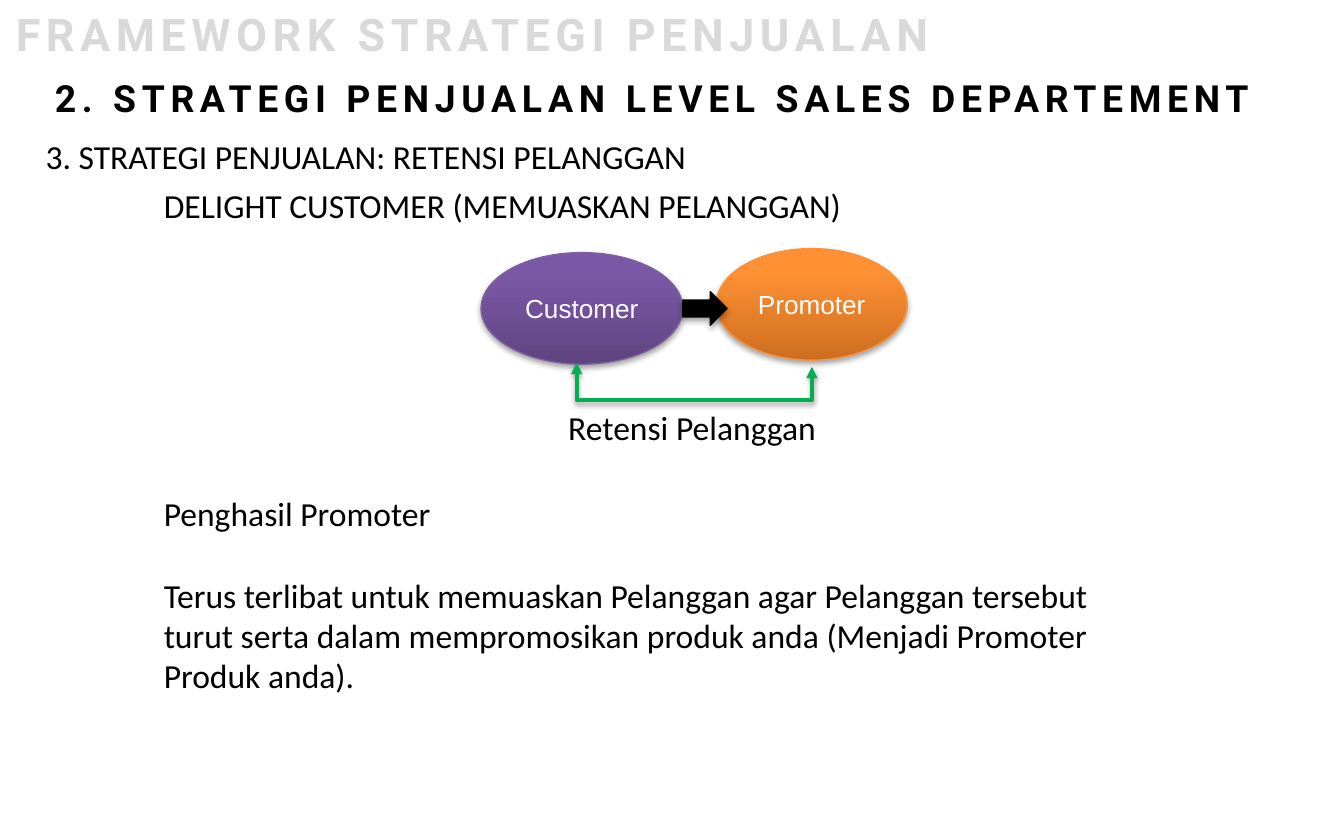
from copy import deepcopy

from lxml import etree
from pptx import Presentation
from pptx.dml.color import RGBColor
from pptx.enum import shapes, text
from pptx.oxml.ns import qn
from pptx.util import Inches, Pt

BLACK = RGBColor(0x00, 0x00, 0x00)
WHITE = RGBColor(0xFF, 0xFF, 0xFF)
GRAY = RGBColor(0xD9, 0xD9, 0xD9)
GREEN = RGBColor(0x00, 0xB0, 0x50)
PURPLE_LINE = RGBColor(0x7D, 0x60, 0xA0)
PURPLES = [RGBColor(0x5F, 0x44, 0x80), RGBColor(0x7B, 0x58, 0xA6), RGBColor(0x7C, 0x57, 0xA8)]
ORANGE_LINE = RGBColor(0xF6, 0x92, 0x40)
ORANGES = [RGBColor(0xCC, 0x6E, 0x20), RGBColor(0xFF, 0x90, 0x34), RGBColor(0xFF, 0x91, 0x36)]
STOPS = [0, 0.8, 1]

HEADING = dict(font="Roboto", bold=True, spacing=3)
LABELS = [
    ((0.02, 0, 10, 0.5), ["FRAMEWORK STRATEGI PENJUALAN"],
     dict(HEADING, size=24, color=GRAY)),
    ((0.31, 0.51, 9.94, 0.44), ["2. STRATEGI PENJUALAN LEVEL SALES DEPARTEMENT"],
     dict(HEADING, size=20)),
    ((0.24, 0.96, 5.01, 0.4), ["3. STRATEGI PENJUALAN: RETENSI PELANGGAN"], dict(wrap=False)),
    ((1.12, 1.33, 5.29, 0.4), ["DELIGHT CUSTOMER (MEMUASKAN PELANGGAN)"], dict(wrap=False)),
    ((4.13, 2.98, 2.07, 0.4), ["Retensi Pelanggan"], dict(wrap=False)),
    ((1.12, 3.62, 7.38, 1.62), [
        "Penghasil Promoter",
        "Terus terlibat untuk memuaskan Pelanggan agar Pelanggan tersebut turut serta "
        "dalam mempromosikan produk anda (Menjadi Promoter Produk anda).",
    ], dict(gap=22)),
]
ROLES = [
    ("Customer", (3.58, 1.88, 1.5, 0.83), PURPLES, PURPLE_LINE),
    ("Promoter", (5.33, 1.85, 1.42, 0.83), ORANGES, ORANGE_LINE),
]
ARROW = (5.08, 2.17, 0.33, 0.25)
LOOP_START, LOOP_END, LOOP_BOTTOM = (4.29, 2.7), (6.04, 2.73), 2.98


def write(s, lines, size=18, font="Calibri", color=BLACK, bold=False, spacing=0,
          gap=0, wrap=True, align=None):
    tf = s.text_frame
    tf.word_wrap = wrap
    for i, line in enumerate(lines):
        p = tf.paragraphs[0] if i == 0 else tf.add_paragraph()
        p.alignment = align
        if i and gap:
            p.space_before = Pt(gap)
        r = p.add_run()
        r.text = line
        r.font.size, r.font.name, r.font.bold = Pt(size), font, bold
        r.font.color.rgb = color
        if spacing:
            r.font._element.set("spc", str(spacing * 100))


def add_shadow(s, opacity, distance):
    s_pr = s._element.spPr
    effects = etree.SubElement(s_pr, qn("a:effectLst"))
    shadow = etree.SubElement(effects, qn("a:outerShdw"), blurRad=str(Pt(3.1)),
                              dist=str(Pt(distance)), dir="5400000", rotWithShape="0")
    black = etree.SubElement(shadow, qn("a:srgbClr"), val=str(BLACK))
    etree.SubElement(black, qn("a:alpha"), val=str(opacity * 1000))


def add_figure(kind, box, line):
    s = slide.shapes.add_shape(kind, *map(Inches, box))
    s.line.color.rgb = line
    s.line.width = Pt(0.75)
    return s


def fill_gradient(s, colors):
    s.fill.gradient()
    s.fill.gradient_angle = 90
    stop_list = s._element.spPr.find(".//" + qn("a:gsLst"))
    stop_list.append(deepcopy(stop_list[-1]))
    for stop, position, color in zip(s.fill.gradient_stops, STOPS, colors):
        stop.position = position
        stop.color.rgb = color


def add_loop():
    (x1, y1), (x2, y2) = LOOP_START, LOOP_END
    span, rise = x2 - x1, y2 - y1
    left, top = (x1 + x2 - rise) / 2, (y1 + y2 - span) / 2
    c = slide.shapes.add_connector(
        shapes.MSO_CONNECTOR.ELBOW,
        *map(Inches, (left + rise, top, left, top + span)))
    s_pr = c._element.spPr
    s_pr.find(qn("a:xfrm")).set("rot", str(270 * 60000))
    guides = s_pr.find(qn("a:prstGeom")).find(qn("a:avLst"))
    bend = round((LOOP_BOTTOM - y1) / rise * 100000)
    etree.SubElement(guides, qn("a:gd"), name="adj1", fmla=f"val {bend}")
    c.line.color.rgb = GREEN
    c.line.width = Pt(2)
    for end in ("a:headEnd", "a:tailEnd"):
        etree.SubElement(c.line._get_or_add_ln(), qn(end), type="triangle")
    add_shadow(c, 38, 1.6)


prs = Presentation()
prs.slide_width, prs.slide_height = Inches(10), Inches(6.25)
slide = prs.slides.add_slide(prs.slide_layouts[6])

for name, box, colors, line in ROLES:
    s = add_figure(shapes.MSO_SHAPE.OVAL, box, line)
    fill_gradient(s, colors)
    add_shadow(s, 35, 1.8)
    s.text_frame.vertical_anchor = text.MSO_ANCHOR.MIDDLE
    write(s, [name], size=14, font="Arial", color=WHITE, align=text.PP_ALIGN.CENTER)

s = add_figure(shapes.MSO_SHAPE.RIGHT_ARROW, ARROW, BLACK)
s.fill.solid()
s.fill.fore_color.rgb = BLACK
add_shadow(s, 35, 1.8)

add_loop()

for box, lines, style in LABELS:
    s = slide.shapes.add_textbox(*map(Inches, box))
    write(s, lines, **style)
    s.text_frame.auto_size = text.MSO_AUTO_SIZE.SHAPE_TO_FIT_TEXT

prs.save("out.pptx")
